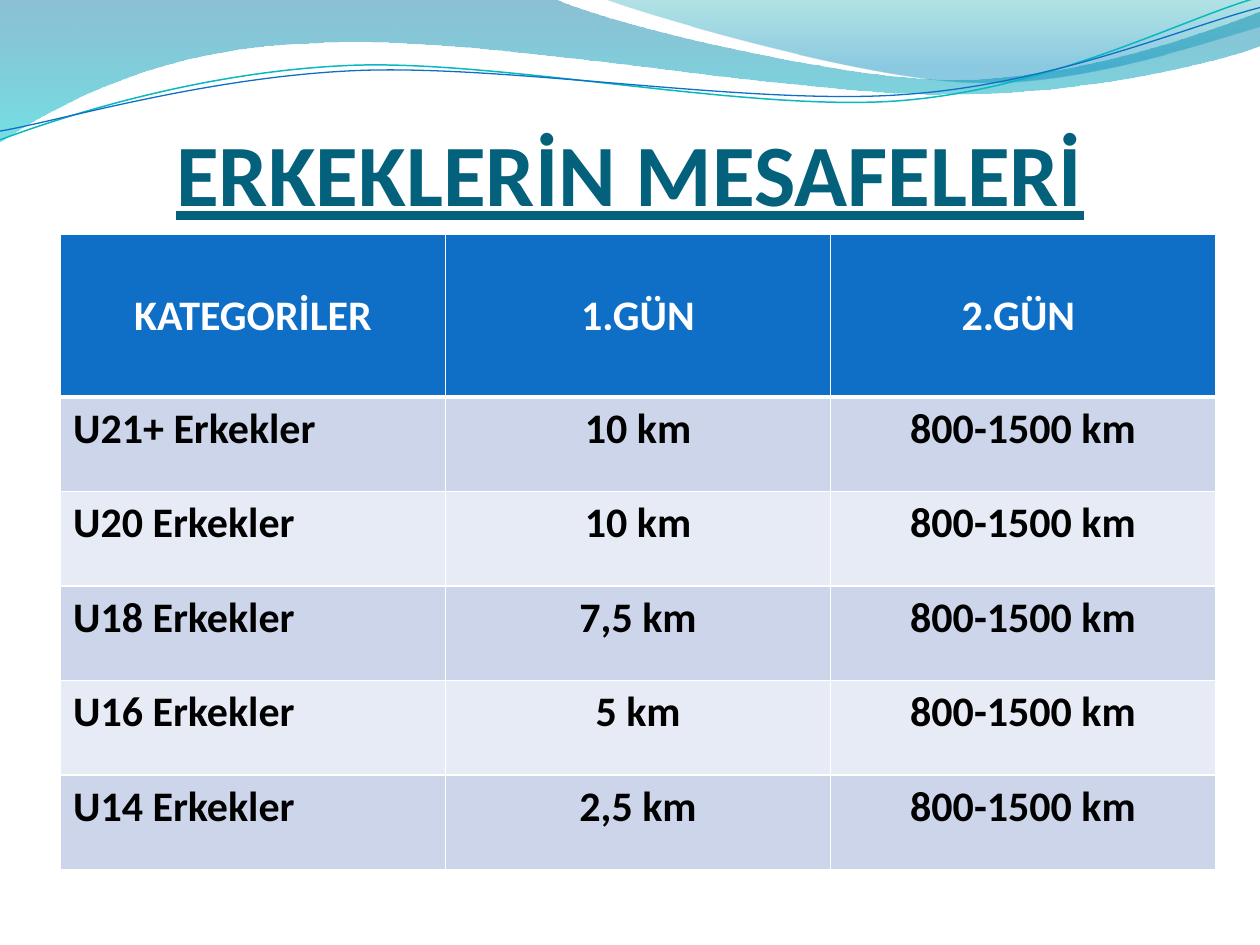
from math import cos, radians, sin
from pptx import Presentation
from pptx.dml.color import RGBColor
from pptx.enum.text import MSO_ANCHOR, MSO_AUTO_SIZE, PP_ALIGN
from pptx.oxml import parse_xml
from pptx.oxml.ns import nsdecls, qn
from pptx.util import Pt
from lxml.etree import SubElement

WHITE = RGBColor(0xFF, 0xFF, 0xFF)
BLACK = RGBColor(0x00, 0x00, 0x00)
BLUE = RGBColor(0x0F, 0x6F, 0xC6)
TEAL = RGBColor(0x0A, 0xB8, 0xBF)
PETROL = RGBColor(0x04, 0x61, 0x7B)
BANDS = (RGBColor(0xCC, 0xD5, 0xEA), RGBColor(0xE7, 0xEB, 0xF5))

WIDE_WAVE = [
    (0, 0), (316.8, -0.7),
    (342.7, 12.2, 478.1, 45.4, 545.8, 45.4),
    (614.2, 45.4, 689.8, 18.7, 720, 6.5),
    (720.7, 25.9),
    (707.8, 31.7, 626.4, 54.7, 537.1, 54),
    (447.8, 54, 275, 20.2, 185, 24.5),
    (92.2, 25.9, 33.1, 59.8, -0.7, 81.4),
]
RIGHT_WAVE = [
    (344.9, -0.7),
    (366.5, 7.9, 491, 44.6, 553.7, 46.8),
    (616.3, 49.7, 691.9, 23, 720, 15.1),
    (720, 0),
]
TEAL_STRAND = [
    (0, 79.9),
    (34.6, 67, 113.8, 41, 199.4, 37.4),
    (284.4, 33.8, 427, 64.1, 513.4, 57.6),
    (599.8, 51.1, 675.4, 10.8, 718.6, -1.4),
]
BLUE_STRAND = [
    (0, 74.9),
    (33.8, 69.1, 118.1, 43.9, 203.8, 40.3),
    (290.2, 36.7, 429.8, 60.5, 516.2, 54),
    (601.9, 48.2, 677.5, 15.1, 720, 4.3),
]
STRAND_TILT = -2.7
STRAND_CENTER = (359.3, 41.6)
WIDE_STOPS = [(0, RGBColor(0x00, 0x74, 0xA1), 45), (1, RGBColor(0x00, 0xC6, 0xCF), 55)]
RIGHT_STOPS = [(0, RGBColor(0x00, 0xA1, 0xA9), 30), (0.8, RGBColor(0x00, 0x8B, 0xBF), 45)]

HEADINGS = ("KATEGORİLER", "1.GÜN", "2.GÜN ")
DISTANCES = [("U21+", "10"), ("U20", "10"), ("U18", "7,5"), ("U16", "5"), ("U14", "2,5")]


def turn(segment, degrees, center):
    angle = radians(degrees)
    turned = []
    for x, y in zip(segment[::2], segment[1::2]):
        dx, dy = x - center[0], y - center[1]
        turned += [center[0] + dx * cos(angle) - dy * sin(angle),
                   center[1] + dx * sin(angle) + dy * cos(angle)]
    return tuple(turned)


class SlideBuilder:
    font = "Calibri"
    cell_size = 24

    def __init__(self, slide):
        self.slide = slide

    def style(self, frame, size, color, align, underline=None):
        for paragraph in frame.paragraphs:
            paragraph.alignment = align
            for run in paragraph.runs:
                run.font.name = self.font
                run.font.size = Pt(size)
                run.font.bold = True
                run.font.underline = underline
                run.font.color.rgb = color

    def outline(self, shapes, segments, close):
        anchors = [(Pt(segment[-2]), Pt(segment[-1])) for segment in segments]
        builder = shapes.build_freeform(*anchors[0])
        builder.add_line_segments(anchors[1:], close=close)
        shape = builder.convert_to_shape()
        shape.shadow.inherit = False
        sides = list(shape.element.spPr.iter(qn("a:lnTo")))
        for side, segment in zip(sides, segments[1:]):
            if len(segment) == 6:
                side.getparent().replace(side, self.bend(segment, shape))
        return shape

    def bend(self, segment, shape):
        points = "".join(
            f'<a:pt x="{Pt(x) - shape.left}" y="{Pt(y) - shape.top}"/>'
            for x, y in zip(segment[::2], segment[1::2]))
        return parse_xml(f'<a:cubicBezTo {nsdecls("a")}>{points}</a:cubicBezTo>')

    def wave(self, segments, stops):
        shape = self.outline(self.slide.shapes, segments, True)
        shape.line.fill.background()
        shape.fill.gradient()
        shape.fill.gradient_angle = 270
        for stop, (position, color, _) in zip(shape.fill.gradient_stops, stops):
            stop.position = position
            stop.color.rgb = color
        tints = shape.element.spPr.iter(qn("a:srgbClr"))
        for tint, (_, _, opacity) in zip(tints, stops):
            SubElement(tint, qn("a:alpha")).set("val", str(opacity * 1000))

    def strands(self, lines):
        group = self.slide.shapes.add_group_shape()
        for segments, color, width in lines:
            level = [turn(segment, -STRAND_TILT, STRAND_CENTER) for segment in segments]
            shape = self.outline(group.shapes, level, False)
            shape.rotation = STRAND_TILT
            shape.fill.background()
            shape.line.color.rgb = color
            shape.line.width = Pt(width)

    def title(self, text):
        title = self.slide.shapes.title
        self.slide.shapes.element.append(title.element)
        title.left, title.top, title.width, title.height = Pt(36), Pt(55.4), Pt(648), Pt(72.7)
        frame = title.text_frame
        frame.text = text
        frame.word_wrap = True
        frame.auto_size = MSO_AUTO_SIZE.NONE
        frame.vertical_anchor = MSO_ANCHOR.BOTTOM
        frame.margin_left = frame.margin_right = frame.margin_bottom = 0
        frame.margin_top = Pt(3.6)
        self.style(frame, 50, PETROL, PP_ALIGN.CENTER, underline=True)

    def borders(self, cell, top, bottom):
        properties = cell._tc.get_or_add_tcPr()
        widths = {"lnL": 1, "lnR": 1, "lnT": top, "lnB": bottom}
        for index, (side, width) in enumerate(widths.items()):
            properties.insert(index, parse_xml(
                f'<a:{side} {nsdecls("a")} w="{Pt(width)}"><a:solidFill>'
                f'<a:srgbClr val="{WHITE}"/></a:solidFill></a:{side}>'))

    def table(self, rows, left, top, column_width, header_height, row_height):
        height = header_height + row_height * (len(rows) - 1)
        table = self.slide.shapes.add_table(
            len(rows), len(rows[0]), Pt(left), Pt(top),
            Pt(column_width * len(rows[0])), Pt(height)).table
        for r, row in enumerate(rows):
            header = r == 0
            table.rows[r].height = Pt(header_height if header else row_height)
            for c, text in enumerate(row):
                cell = table.cell(r, c)
                cell.text_frame.text = text
                cell.vertical_anchor = MSO_ANCHOR.MIDDLE if header else MSO_ANCHOR.TOP
                cell.fill.solid()
                cell.fill.fore_color.rgb = BLUE if header else BANDS[(r - 1) % 2]
                self.borders(cell, 3 if r == 1 else 1, 3 if header else 1)
                centred = header or c > 0
                self.style(cell.text_frame, self.cell_size, WHITE if header else BLACK,
                           PP_ALIGN.CENTER if centred else PP_ALIGN.LEFT)


def main():
    presentation = Presentation()
    presentation.slide_width, presentation.slide_height = Pt(720), Pt(540)
    builder = SlideBuilder(presentation.slides.add_slide(presentation.slide_layouts[5]))
    builder.wave(WIDE_WAVE, WIDE_STOPS)
    builder.wave(RIGHT_WAVE, RIGHT_STOPS)
    builder.strands([(TEAL_STRAND, TEAL, 0.85), (BLUE_STRAND, BLUE, 0.75)])
    builder.title("ERKEKLERİN MESAFELERİ")
    rows = [HEADINGS] + [(f"{group} Erkekler", f"{distance} km", "800-1500 km")
                         for group, distance in DISTANCES]
    builder.table(rows, left=34.6, top=134, column_width=220, header_height=92.9, row_height=54)
    presentation.save("out.pptx")


if __name__ == "__main__":
    main()
